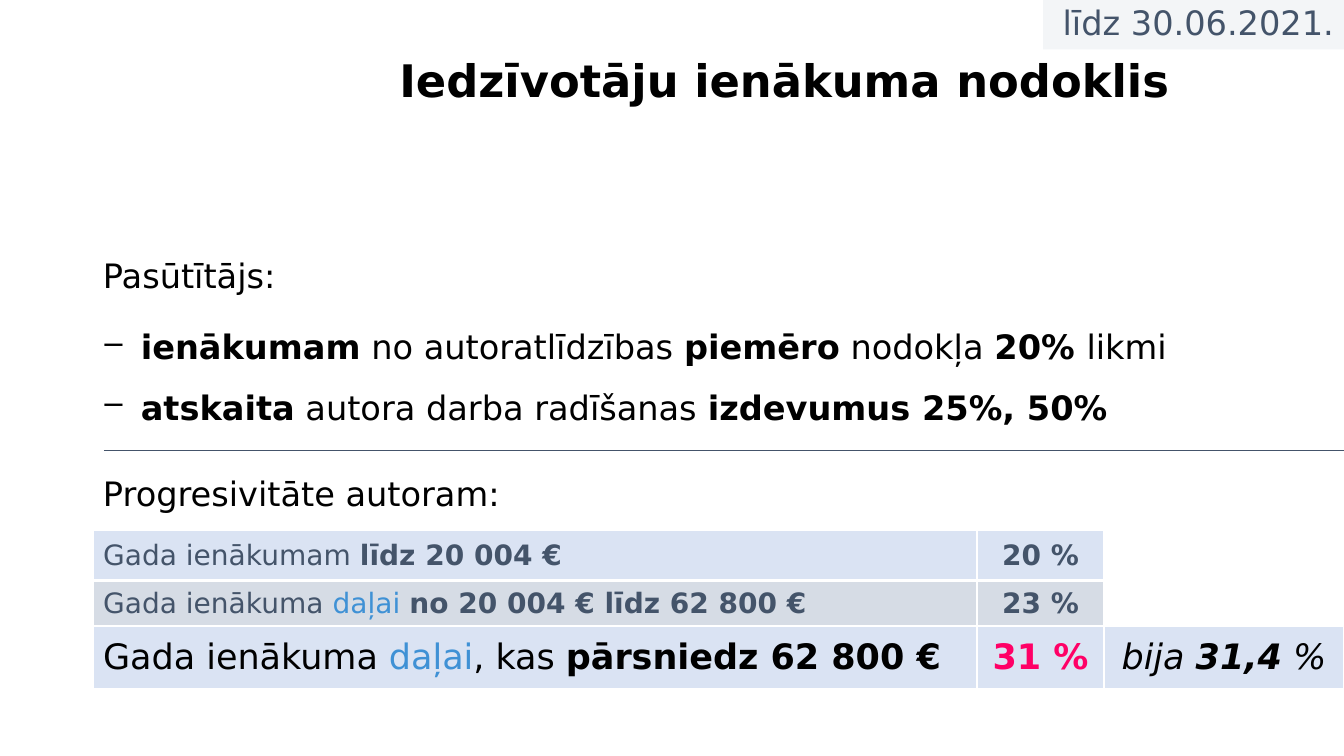
from lxml import etree
from pptx import Presentation
from pptx.dml.color import RGBColor
from pptx.enum.shapes import MSO_CONNECTOR, MSO_SHAPE
from pptx.enum.text import MSO_ANCHOR, MSO_AUTO_SIZE, PP_ALIGN
from pptx.oxml.ns import qn
from pptx.util import Pt

BLACK = RGBColor(0x00, 0x00, 0x00)
SLATE = RGBColor(0x44, 0x54, 0x6A)
SKY = RGBColor(0x3F, 0x91, 0xD5)
PINK = RGBColor(0xFF, 0x00, 0x66)
PALE_BLUE = RGBColor(0xDA, 0xE3, 0xF3)
PALE_GREY = RGBColor(0xD6, 0xDC, 0xE5)
FONT = "DejaVu Sans"
LEFT, CENTER, RIGHT, JUSTIFY = PP_ALIGN.LEFT, PP_ALIGN.CENTER, PP_ALIGN.RIGHT, PP_ALIGN.JUSTIFY
MIDDLE = MSO_ANCHOR.MIDDLE
NO_AUTOFIT = MSO_AUTO_SIZE.NONE
STRAIGHT = MSO_CONNECTOR.STRAIGHT
RECTANGLE = MSO_SHAPE.RECTANGLE


def write_runs(paragraph, runs, size, alignment):
    paragraph.alignment = alignment
    for text, color, style in runs:
        run = paragraph.add_run()
        run.text = text
        run.font.name = FONT
        run.font.size = Pt(size)
        run.font.bold = "b" in style
        run.font.italic = "i" in style
        run.font.color.rgb = color


def add_border(cell, side, width):
    line = etree.SubElement(cell._tc.get_or_add_tcPr(), qn(f"a:{side}"), w=str(Pt(width)))
    fill = etree.SubElement(line, qn("a:solidFill"))
    etree.SubElement(fill, qn("a:srgbClr"), val="FFFFFF")


presentation = Presentation()
presentation.slide_width = Pt(960)
presentation.slide_height = Pt(540)
slide = presentation.slides.add_slide(presentation.slide_layouts[5])

title = slide.shapes.title
title.left, title.top, title.width, title.height = Pt(278), Pt(35.3), Pt(632), Pt(47.5)
title.text_frame.auto_size = NO_AUTOFIT
title.text_frame.vertical_anchor = MIDDLE
title_paragraph = title.text_frame.paragraphs[0]
title_paragraph.line_spacing = 0.9
write_runs(title_paragraph, [("Iedzīvotāju ienākuma nodoklis", BLACK, "b")], 32, LEFT)

rate_rows = [
    (36, 20, PALE_BLUE, [
        [("Gada ienākumam ", SLATE, ""), ("līdz 20 004 €", SLATE, "b")],
        [("20 %", SLATE, "b")],
        []]),
    (32.4, 20, PALE_GREY, [
        [("Gada ienākuma ", SLATE, ""), ("daļai ", SKY, ""),
         ("no 20 004 € līdz 62 800 €", SLATE, "b")],
        [("23 %", SLATE, "b")],
        []]),
    (44.6, 25, PALE_BLUE, [
        [("Gada ienākuma ", BLACK, ""), ("daļai", SKY, ""), (", kas ", BLACK, ""),
         ("pārsniedz 62 800 €", BLACK, "b")],
        [("31 %", PINK, "b")],
        [("bija ", BLACK, "i"), ("31,4", BLACK, "bi"), (" %", BLACK, "i")]]),
]
table = slide.shapes.add_table(3, 3, Pt(66.5), Pt(378.7), Pt(893.5), Pt(113)).table
table.first_row = False
table.horz_banding = False
for column, width in zip(table.columns, (631.4, 90.7, 171.4)):
    column.width = Pt(width)
for row_index, (height, size, color, cells) in enumerate(rate_rows):
    table.rows[row_index].height = Pt(height)
    for column_index, runs in enumerate(cells):
        cell = table.cell(row_index, column_index)
        cell.vertical_anchor = MIDDLE
        for side in ("lnL", "lnR", "lnT", "lnB"):
            heavy = (row_index, side) in ((0, "lnB"), (1, "lnT"))
            add_border(cell, side, 3 if heavy else 1)
        if runs:
            cell.fill.solid()
            cell.fill.fore_color.rgb = color
        else:
            cell.fill.background()
        alignment = CENTER if column_index else LEFT
        write_runs(cell.text_frame.paragraphs[0], runs, size, alignment)

date_tag = slide.shapes.add_shape(RECTANGLE, Pt(745.2), Pt(-0.7), Pt(214.8), Pt(36))
date_tag.shadow.inherit = False
date_tag.line.fill.background()
date_tag.fill.solid()
date_tag.fill.fore_color.rgb = PALE_GREY
tag_color = date_tag.fill._xPr.find(qn("a:solidFill"))[0]
etree.SubElement(tag_color, qn("a:alpha"), val="28000")
date_tag.text_frame.vertical_anchor = MIDDLE
date_paragraph = date_tag.text_frame.paragraphs[0]
date_paragraph.line_spacing = 0.9
write_runs(date_paragraph, [("līdz 30.06.2021.", SLATE, "")], 24, RIGHT)

payer_lines = [
    (False, 0, [("Pasūtītājs:", BLACK, "")]),
    (True, 7.5, [("ienākumam", BLACK, "b"), (" no autoratlīdzības ", BLACK, ""),
                 ("piemēro", BLACK, "b"), (" nodokļa ", BLACK, ""),
                 ("20% ", BLACK, "b"), ("likmi", BLACK, "")]),
    (True, 0, [("atskaita", BLACK, "b"), (" autora darba radīšanas ", BLACK, ""),
               ("izdevumus 25%, 50%", BLACK, "b")]),
]
progress_lines = [(False, 0, [("Progresivitāte autoram:", BLACK, "")])]
for top, height, line_spacing, lines in (
    (164.2, 140.4, 1.5, payer_lines),
    (337.7, 33, 0.9, progress_lines),
):
    text_frame = slide.shapes.add_textbox(Pt(66.5), Pt(top), Pt(789), Pt(height)).text_frame
    text_frame.word_wrap = True
    for index, (bulleted, space_before, runs) in enumerate(lines):
        paragraph = text_frame.add_paragraph() if index else text_frame.paragraphs[0]
        if bulleted:
            properties = paragraph._p.get_or_add_pPr()
            properties.set("marL", str(Pt(27)))
            properties.set("indent", str(Pt(-27)))
            etree.SubElement(properties, qn("a:buChar"), char="‒")
        paragraph.line_spacing = line_spacing
        paragraph.space_before = Pt(space_before)
        write_runs(paragraph, runs, 24, JUSTIFY)

divider = slide.shapes.add_connector(STRAIGHT, Pt(74.2), Pt(321.4), Pt(960), Pt(321.4))
divider.line.color.rgb = SLATE
divider.line.width = Pt(0.5)
etree.SubElement(divider._element.spPr, qn("a:effectLst"))

presentation.save("out.pptx")
